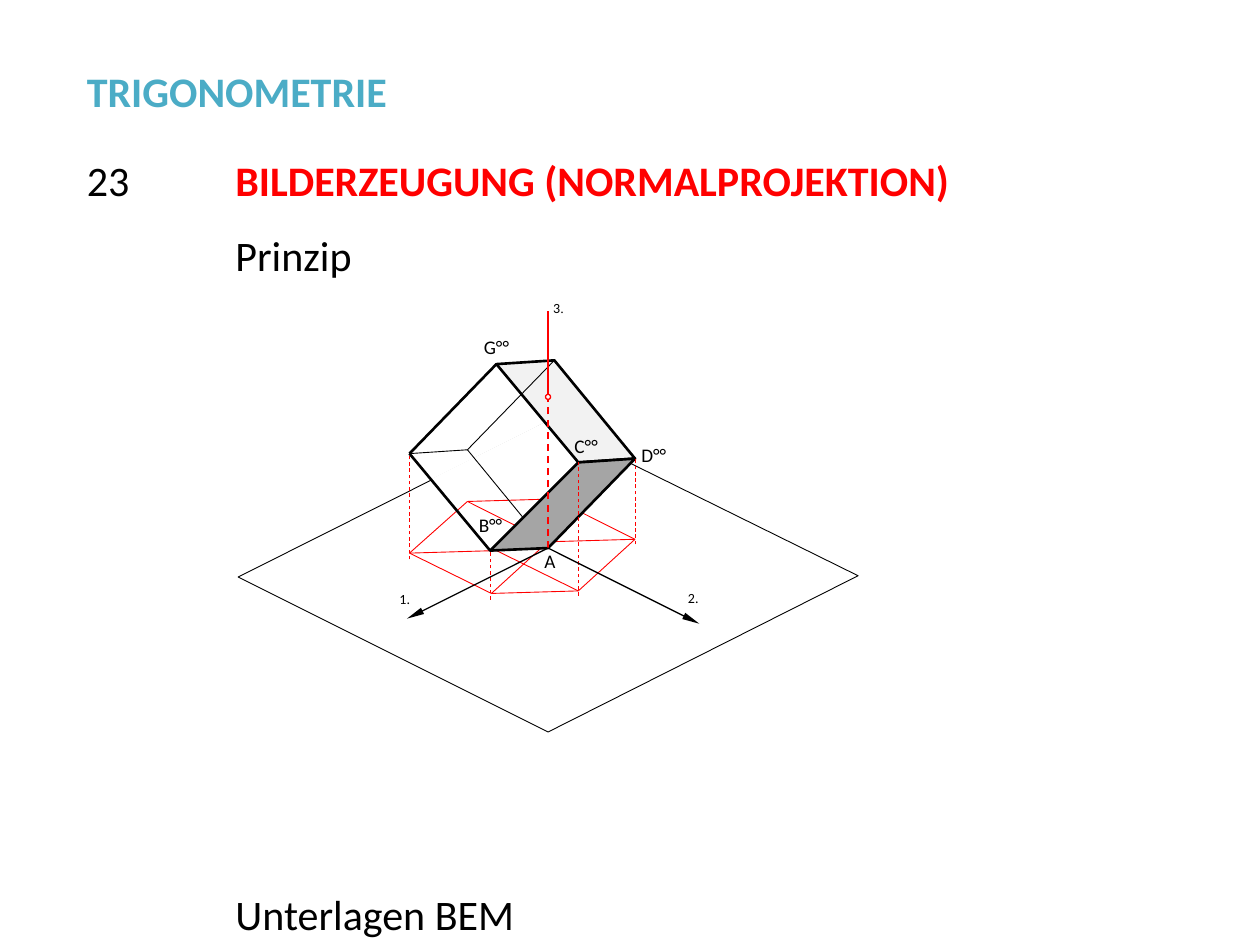
from lxml import etree
from pptx import Presentation
from pptx.dml.color import RGBColor
from pptx.enum.dml import MSO_LINE
from pptx.enum.shapes import MSO_CONNECTOR, MSO_SHAPE
from pptx.oxml.ns import qn
from pptx.util import Inches, Pt

DASH = MSO_LINE.DASH
STRAIGHT = MSO_CONNECTOR.STRAIGHT
OVAL = MSO_SHAPE.OVAL

BLACK = RGBColor(0x00, 0x00, 0x00)
WHITE = RGBColor(0xFF, 0xFF, 0xFF)
RED = RGBColor(0xFF, 0x00, 0x00)
TEAL = RGBColor(0x4B, 0xAC, 0xC6)
PALE = RGBColor(0xF2, 0xF2, 0xF2)
GREY = RGBColor(0xA5, 0xA5, 0xA5)

# text, left, top, width, colour, bold
HEADS = [
    ("23", 0.59, 1.18, 1.02, BLACK, False),
    ("TRIGONOMETRIE", 0.59, 0.47, 4.41, TEAL, True),
    ("BILDERZEUGUNG (NORMALPROJEKTION)", 1.77, 1.18, 6.9, RED, True),
    ("Prinzip", 1.77, 1.77, 6.9, BLACK, False),
    ("Unterlagen BEM", 1.77, 7, 6.48, BLACK, False),
]

# text, left, top, width, size
BACK_TAGS = [("B°°", 3.8, 4.07, 0.3, 11), ("G°°", 3.84, 2.66, 0.39, 11)]
FRONT_TAGS = [
    ("C°°", 4.56, 3.45, 0.4, 11),
    ("D°°", 5.09, 3.52, 0.31, 11),
    ("A", 4.32, 4.36, 0.17, 11),
    ("2.", 5.46, 4.68, 0.18, 8),
    ("1.", 3.17, 4.69, 0.18, 8),
]

# Corners of the cube and their projections on the ground plane
CUBE = {
    "A": (4.35, 4.35), "B": (3.89, 4.37), "C": (4.59, 3.67), "D": (5.04, 3.64),
    "E": (3.71, 3.57), "F": (3.25, 3.6), "G": (3.94, 2.89), "H": (4.4, 2.86),
}
GROUND = {
    "A": (4.35, 4.3), "B": (3.9, 4.71), "C": (4.59, 4.69), "D": (5.04, 4.28),
    "E": (3.71, 3.98), "F": (3.25, 4.39), "G": (3.94, 4.37), "H": (4.4, 3.96),
}
EDGES = "AD AE AB EF DC DH BF CG EH BC FG HG".split()
CUBE_EDGES = {"AD": 0.75, "AE": 0.5, "AB": 0.75, "DC": 0.75, "EF": 0.5,
              "EH": 0.5, "FG": 1.5, "BC": 0.75, "BF": 1.5}
DROPS = {"D": 4.32, "C": 4.73, "B": 4.76, "F": 4.44}  # lower ends

PLANE = [(4.34, 3.35), (6.81, 4.57), (4.35, 5.81), (1.89, 4.58)]
HIDDEN = [(3.43, 3.81), (4.35, 3.35), (5.01, 3.68)]
AXES = [(3.23, 4.91), (5.55, 4.95)]
TOP, HOLE, DOT = 2.47, 3.15, 0.04

prs = Presentation()
prs.slide_width, prs.slide_height = Inches(10), Inches(7.5)
slide = prs.slides.add_slide(prs.slide_layouts[6])
shapes = slide.shapes


def add_text(text, left, top, width, height, size, color=BLACK, bold=False):
    box = shapes.add_textbox(*map(Inches, (left, top, width, height)))
    frame = box.text_frame
    frame.word_wrap = True
    frame.text = text
    font = frame.paragraphs[0].runs[0].font
    font.name, font.size, font.bold = "Calibri", Pt(size), bold
    font.color.rgb = color
    return frame


def add_tag(text, left, top, width, size):
    frame = add_text(text, left, top, width, 0.27, size)
    frame.margin_left = frame.margin_right = 0
    frame.margin_top = frame.margin_bottom = 0
    return frame


def add_line(start, end, color, weight, dash=None, arrow=False):
    line = shapes.add_connector(STRAIGHT, *map(Inches, (*start, *end)))
    line.line.color.rgb = color
    line.line.width = Pt(weight)
    if dash:
        line.line.dash_style = dash
    if arrow:
        etree.SubElement(line.line._get_or_add_ln(), qn("a:tailEnd"),
                         type="triangle", w="sm", len="lg")
    etree.SubElement(line._element.spPr, qn("a:effectLst"))


def paint(shape, fill, color, weight):
    shape.shadow.inherit = False
    if fill is None:
        shape.fill.background()
    else:
        shape.fill.solid()
        shape.fill.fore_color.rgb = fill
    shape.line.color.rgb = color
    shape.line.width = Pt(weight)


def add_path(points, color, weight, fill=None, close=True):
    first, *rest = [(Inches(x), Inches(y)) for x, y in points]
    builder = shapes.build_freeform(*first)
    builder.add_line_segments(rest, close=close)
    paint(builder.convert_to_shape(), fill, color, weight)


def add_face(names, fill):
    add_path([CUBE[name] for name in names], BLACK, 1.5, fill)


for text, left, top, width, color, bold in HEADS:
    add_text(text, left, top, width, 0.5, 24, color, bold)

for a, b in EDGES:
    add_line(GROUND[a], GROUND[b], RED, 0.5)
for tag in BACK_TAGS:
    add_tag(*tag)

add_path(PLANE, BLACK, 0.5)
add_path(HIDDEN, WHITE, 1.5, close=False)
add_face("CDHG", PALE)
for (a, b), weight in CUBE_EDGES.items():
    add_line(CUBE[a], CUBE[b], BLACK, weight)
add_face("ADCB", GREY)

for name, low in DROPS.items():
    x, y = CUBE[name]
    add_line((x, low), (x, y), RED, 0.5, DASH)

origin = CUBE["A"]
mid = origin[0]
add_line((mid, HOLE - DOT / 2), (mid, TOP), RED, 1.5)
add_line(origin, (mid, HOLE), RED, 1, DASH)
for tip in AXES:
    add_line(origin, tip, BLACK, 0.75, arrow=True)
dot = shapes.add_shape(OVAL, *map(Inches, (mid - DOT / 2, HOLE - DOT / 2, DOT, DOT)))
paint(dot, WHITE, RED, 0.75)

for tag in FRONT_TAGS:
    add_tag(*tag)
third = add_tag("3", 4.39, 2.38, 0.18, 8)
point = third.paragraphs[0].add_run()
point.text = "."
point.font.name, point.font.size = "Times New Roman", Pt(8)
point.font.color.rgb = BLACK

prs.save("out.pptx")
